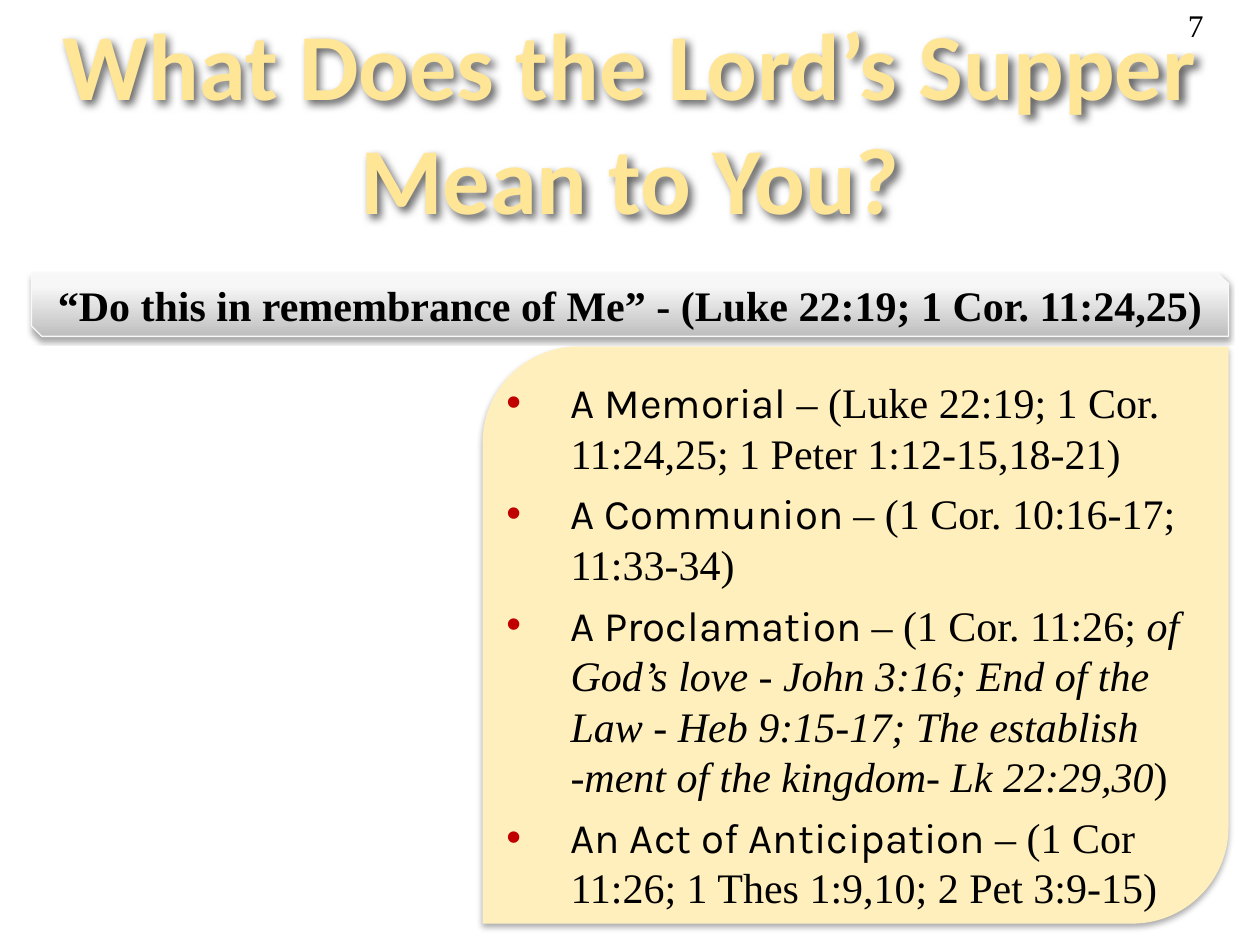
from lxml import etree
from pptx import Presentation
from pptx.dml.color import RGBColor
from pptx.enum import shapes, text
from pptx.oxml.ns import qn
from pptx.util import Emu, Inches, Pt

BLACK = RGBColor(0x00, 0x00, 0x00)
CREAM = RGBColor(0xFF, 0xEF, 0xBD)
GOLD = RGBColor(0xFF, 0xE6, 0x97)
RED = RGBColor(0xC0, 0x00, 0x00)
GREY = RGBColor(0x7D, 0x7D, 0x7D)
EDGE = RGBColor(0xF9, 0xF9, 0xF9)
BANNER_STOPS = [
    (0, RGBColor(0xBE, 0xBE, 0xBE)),
    (80, RGBColor(0xF7, 0xF7, 0xF7)),
    (100, RGBColor(0xF8, 0xF8, 0xF8)),
]
SERIF, SANS, TITLE_FONT = "Times New Roman", "Karla", "Calibri"

TITLE = "What Does the Lord’s Supper Mean to You?"
VERSE = "“Do this in remembrance of Me” - (Luke 22:19; 1 Cor. 11:24,25)"
PAGE_NUMBER = "7"
# Each meaning: heading, reference, italic part, closing part
MEANINGS = [
    ("A Memorial ", "– (Luke 22:19; 1 Cor. 11:24,25; 1 Peter 1:12-15,18-21)", "", ""),
    ("A Communion ", "– (1 Cor. 10:16-17; 11:33-34)", "", ""),
    ("A Proclamation ", "– (1 Cor. 11:26; ",
     "of God’s love - John 3:16; End of the Law - Heb 9:15-17; "
     "The establish -ment of the kingdom- Lk 22:29,30", ")"),
    ("An Act of Anticipation ", "– (1 Cor 11:26; 1 Thes 1:9,10; 2 Pet 3:9-15)", "", ""),
]

BANNER_BOX = (0.25, 2.17, 9.5, 0.5)
PANEL_BOX = (3.83, 2.75, 5.92, 4.58)
LIST_BOX = (3.92, 2.94, 5.67, 4.39)
TITLE_BOX = (0, 0, 10, 1.92)
NUMBER_BOX = (9.33, 0, 0.67, 0.5)
LIST_INDENT = Inches(0.51)


def add_color(parent, color):
    return etree.SubElement(parent, qn("a:srgbClr"), val=str(color))


def add_outer_shadow(shape, opacity, blur, distance, angle):
    shape.shadow.inherit = False
    effects = shape._element.spPr.find(qn("a:effectLst"))
    shadow = etree.SubElement(
        effects, qn("a:outerShdw"), blurRad=str(Pt(blur)), dist=str(Pt(distance)),
        dir=str(angle * 60000), algn="ctr", rotWithShape="0")
    etree.SubElement(add_color(shadow, BLACK), qn("a:alpha"), val=str(opacity * 1000))


def add_panel(slide, kind, box, opacity, blur, distance):
    shape = slide.shapes.add_shape(kind, *map(Inches, box))
    add_outer_shadow(shape, opacity, blur, distance, 90)
    return shape


def fill_gradient(shape, stops):
    """Fill from bottom to top with any number of stops."""
    shape.fill.gradient()
    shape.fill.gradient_angle = 90
    stop_list = shape._element.spPr.find(qn("a:gradFill")).find(qn("a:gsLst"))
    for old_stop in list(stop_list):
        stop_list.remove(old_stop)
    for position, color in stops:
        add_color(etree.SubElement(stop_list, qn("a:gs"), pos=str(position * 1000)), color)


def add_text_box(slide, box):
    text_box = slide.shapes.add_textbox(*map(Inches, box))
    text_box.text_frame.word_wrap = True
    return text_box


def add_run(paragraph, words, name, size, color=BLACK, bold=False, italic=False):
    run = paragraph.add_run()
    run.text = words
    font = run.font
    font.name, font.size, font.bold, font.italic = name, Pt(size), bold, italic
    font.color.rgb = color
    return run


def add_bullet(paragraph):
    properties = paragraph._p.get_or_add_pPr()
    properties.set("marL", str(LIST_INDENT))
    properties.set("indent", str(Emu(-LIST_INDENT)))
    add_color(etree.SubElement(properties, qn("a:buClr")), RED)
    etree.SubElement(properties, qn("a:buFont"), typeface="Arial")
    etree.SubElement(properties, qn("a:buChar"), char="•")


def outline_letters(run, color, width):
    line = etree.Element(qn("a:ln"), w=str(Pt(width)))
    add_color(etree.SubElement(line, qn("a:solidFill")), color)
    run.font._element.insert(0, line)


def main():
    presentation = Presentation()
    presentation.slide_width, presentation.slide_height = Inches(10), Inches(7.5)
    slide = presentation.slides.add_slide(presentation.slide_layouts[6])

    panel = add_panel(slide, shapes.MSO_SHAPE.ROUND_2_DIAG_RECTANGLE, PANEL_BOX, 32, 3.5, 2.2)
    panel.fill.solid()
    panel.fill.fore_color.rgb = CREAM
    panel.line.fill.background()

    number = add_text_box(slide, NUMBER_BOX).text_frame.paragraphs[0]
    add_run(number, PAGE_NUMBER, SERIF, 18)

    frame = add_text_box(slide, LIST_BOX).text_frame
    for index, (heading, reference, emphasis, closing) in enumerate(MEANINGS):
        paragraph = frame.add_paragraph() if index else frame.paragraphs[0]
        add_bullet(paragraph)
        if index:
            paragraph.space_before = Pt(6)
        add_run(paragraph, heading, SANS, 24)
        add_run(paragraph, reference, SERIF, 24)
        if emphasis:
            add_run(paragraph, emphasis, SERIF, 24, italic=True)
            add_run(paragraph, closing, SERIF, 24)

    banner = add_panel(slide, shapes.MSO_SHAPE.SNIP_2_DIAG_RECTANGLE, BANNER_BOX, 35, 3.1, 1.8)
    fill_gradient(banner, BANNER_STOPS)
    banner.line.color.rgb = EDGE
    banner.line.width = Pt(0.75)

    verse = add_text_box(slide, BANNER_BOX).text_frame.paragraphs[0]
    verse.alignment = text.PP_ALIGN.CENTER
    add_run(verse, VERSE, SERIF, 24, bold=True)

    title_box = add_text_box(slide, TITLE_BOX)
    # The box has no fill, so its shadow falls from the letters.
    add_outer_shadow(title_box, 60, 4, 3, 45)
    title = title_box.text_frame.paragraphs[0]
    title.alignment = text.PP_ALIGN.CENTER
    title_run = add_run(title, TITLE, TITLE_FONT, 54, GOLD, bold=True)
    outline_letters(title_run, GREY, 0.83)

    presentation.save("out.pptx")


if __name__ == "__main__":
    main()
